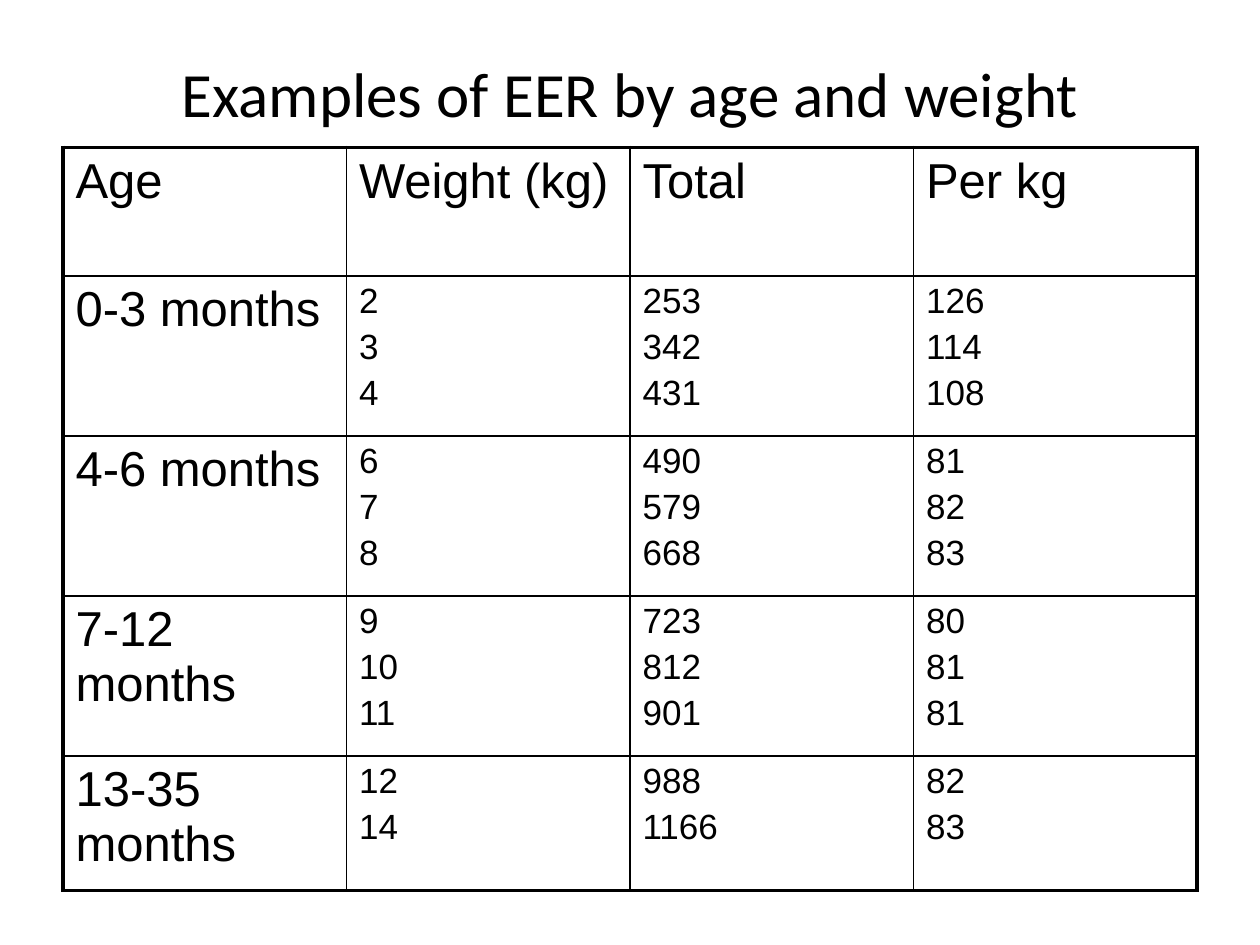
from lxml.etree import SubElement
from pptx import Presentation
from pptx.dml.color import RGBColor
from pptx.enum.text import MSO_ANCHOR, PP_ALIGN
from pptx.oxml import parse_xml
from pptx.oxml.ns import nsdecls, qn
from pptx.util import Inches, Pt

BLACK = RGBColor(0, 0, 0)
WHITE = RGBColor(255, 255, 255)
THIN, THICK = Pt(1), Pt(2.25)

HEADS = ["Age", "Weight (kg)", "Total", "Per kg"]
GROUPS = [
    ("0-3 months", [2, 3, 4], [253, 342, 431], [126, 114, 108]),
    ("4-6 months", [6, 7, 8], [490, 579, 668], [81, 82, 83]),
    ("7-12 months", [9, 10, 11], [723, 812, 901], [80, 81, 81]),
    ("13-35 months", [12, 14], [988, 1166], [82, 83]),
]
HEIGHTS = [1.02, 1.27, 1.27, 1.27, 1.07]


def style(para, size, face):
    look = {"size": Pt(size), "name": face, "bold": False}
    for run in para.runs:
        for key, val in look.items():
            setattr(run.font, key, val)
        run.font.color.rgb = BLACK


def add_title(slide, box):
    title = slide.shapes.title
    for key, val in zip(("left", "top", "width", "height"), box):
        setattr(title, key, Inches(val))
    frame = title.text_frame
    frame.text = "Examples of EER by age and weight"
    frame.vertical_anchor = MSO_ANCHOR.MIDDLE
    para = frame.paragraphs[0]
    para.alignment = PP_ALIGN.CENTER
    style(para, 36, "Calibri")


def fill_cell(cell, lines, size):
    cell.text = "\n".join(map(str, lines))
    cell.fill.solid()
    cell.fill.fore_color.rgb = WHITE
    for para in cell.text_frame.paragraphs:
        gap = SubElement(para._p.get_or_add_pPr(), qn("a:spcBef"))
        SubElement(gap, qn("a:spcPct"), val="20000")
        style(para, size, "Arial")


def set_edges(cell, outer):
    """Draw the four borders, thick on the sides flagged in outer."""
    props = cell._tc.get_or_add_tcPr()
    for at, (side, thick) in enumerate(outer.items()):
        width = THICK if thick else THIN
        props.insert(at, parse_xml(
            f'<a:ln{side} {nsdecls("a")} w="{int(width)}"><a:solidFill>'
            f'<a:srgbClr val="{BLACK}"/></a:solidFill></a:ln{side}>'))


def add_grid(slide, box):
    rows, cols = len(GROUPS) + 1, len(HEADS)
    table = slide.shapes.add_table(rows, cols, *map(Inches, box)).table
    table.first_row = table.horz_banding = False
    for col in table.columns:
        col.width = Inches(box[2] / cols)
    for row, high in zip(table.rows, HEIGHTS):
        row.height = Inches(high)

    data = [[[head] for head in HEADS]]
    data += [[[age], *lists] for age, *lists in GROUPS]
    for r, row in enumerate(data):
        for c, lines in enumerate(row):
            cell = table.cell(r, c)
            fill_cell(cell, lines, 28 if r == 0 or c == 0 else 20)
            set_edges(cell, {"L": c == 0, "R": c == cols - 1,
                             "T": r == 0, "B": r == rows - 1})


def main():
    deck = Presentation()
    deck.slide_width, deck.slide_height = Inches(10), Inches(7.5)
    slide = deck.slides.add_slide(deck.slide_layouts[5])
    add_title(slide, (0.5, 0.3, 9, 0.87))
    add_grid(slide, (0.5, 1.17, 9, sum(HEIGHTS)))
    deck.save("out.pptx")


if __name__ == "__main__":
    main()
